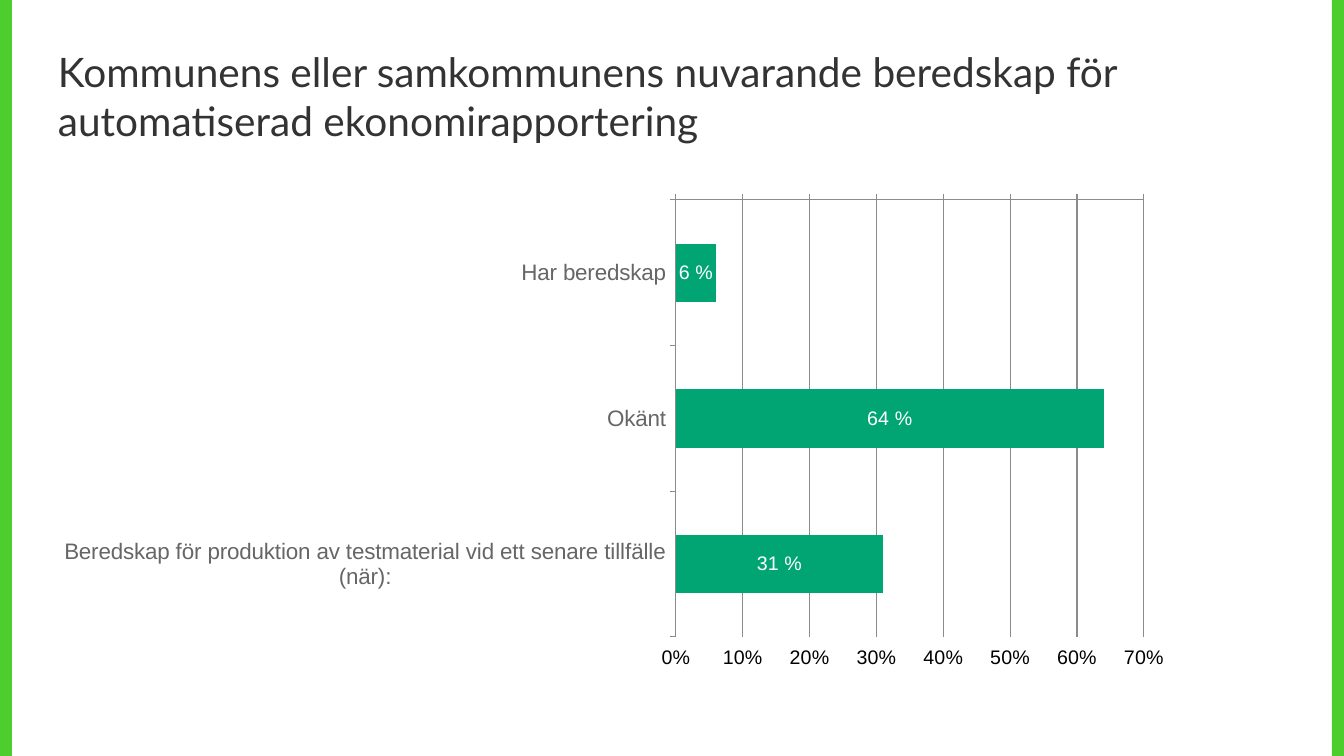
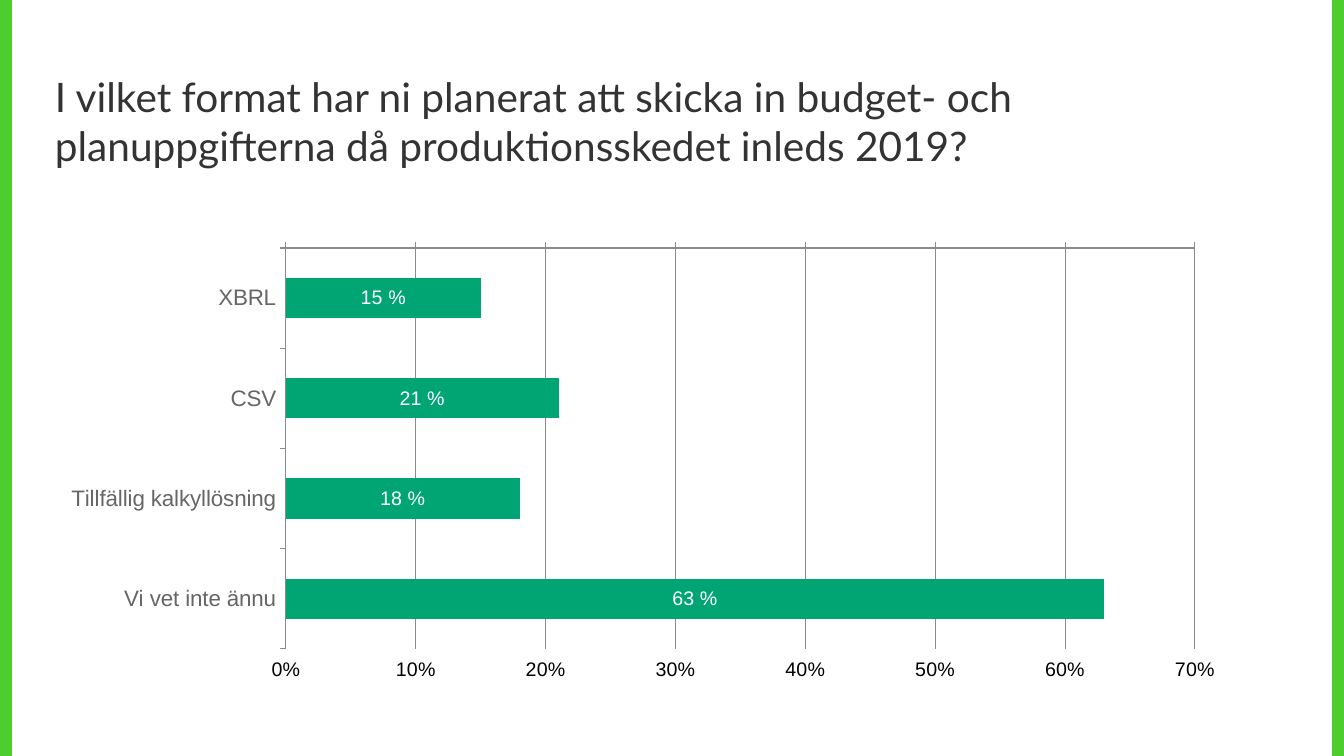
from lxml import etree
from pptx import Presentation
from pptx.chart.data import CategoryChartData
from pptx.dml.color import RGBColor
from pptx.enum.chart import XL_CHART_TYPE, XL_LABEL_POSITION, XL_TICK_LABEL_POSITION, XL_TICK_MARK
from pptx.enum.shapes import MSO_SHAPE
from pptx.enum.text import MSO_ANCHOR, MSO_AUTO_SIZE
from pptx.oxml.ns import qn
from pptx.util import Emu, Pt

BAR_CLUSTERED = XL_CHART_TYPE.BAR_CLUSTERED
CENTER = XL_LABEL_POSITION.CENTER
LOW, HIGH = XL_TICK_LABEL_POSITION.LOW, XL_TICK_LABEL_POSITION.HIGH
OUTSIDE, NONE = XL_TICK_MARK.OUTSIDE, XL_TICK_MARK.NONE
RECTANGLE = MSO_SHAPE.RECTANGLE
MIDDLE = MSO_ANCHOR.MIDDLE
GROW = MSO_AUTO_SIZE.SHAPE_TO_FIT_TEXT

SLIDE_WIDTH, SLIDE_HEIGHT = 1344, 756
BAND_WIDTH = 12
EMU_PER_PX = 12192000 / SLIDE_WIDTH

COLORS = {
    "band": "4DCE2E",
    "title": "333333",
    "bar": "00A573",
    "category": "666666",
    "grid": "8B8B8B",
    "value": "000000",
    "bar_label": "FFFFFF",
}
FONTS = {
    "title": {"name": "Lato", "size": Pt(29)},
    "value": {"name": "Arial", "size": Pt(14)},
    "category": {"name": "Arial", "size": Pt(16)},
    "bar_label": {"name": "Arial", "size": Pt(14)},
}
TITLE_FRAME = {"word_wrap": True, "auto_size": GROW, "vertical_anchor": MIDDLE}
CATEGORY_AXIS = {
    "reverse_order": True,
    "tick_label_position": LOW,
    "major_tick_mark": OUTSIDE,
    "minor_tick_mark": NONE,
    "has_major_gridlines": False,
}
VALUE_AXIS = {
    "minimum_scale": 0,
    "maximum_scale": 0.7,
    "major_unit": 0.1,
    "tick_label_position": HIGH,
    "major_tick_mark": OUTSIDE,
    "minor_tick_mark": NONE,
    "has_major_gridlines": True,
}
BAR_LABELS = {
    "show_value": True,
    "number_format": "0 %",
    "number_format_is_linked": False,
    "position": CENTER,
}

SURVEY = [
    {
        "title": "Kommunens eller samkommunens nuvarande beredskap för automatiserad ekonomirapportering",
        "title_box": (48, 42, 1139, 108),
        "chart_box": (42, 191, 1146, 489),
        "plot_box": (676, 200, 468, 437),
        "answers": {
            "Har beredskap": 0.06,
            "Okänt": 0.64,
            "Beredskap för produktion av testmaterial vid ett senare tillfälle (när):": 0.31,
        },
    },
    {
        "title": "I vilket format har ni planerat att skicka in budget- och planuppgifterna då produktionsskedet inleds 2019?",
        "title_box": (45, 66, 1198, 109),
        "chart_box": (42, 240, 1198, 451),
        "plot_box": (286, 248, 909, 401),
        "answers": {
            "XBRL": 0.15,
            "CSV": 0.21,
            "Tillfällig kalkyllösning": 0.18,
            "Vi vet inte ännu": 0.63,
        },
    },
]


def px(*lengths):
    """Turn pixel lengths into EMU."""
    return [Emu(round(length * EMU_PER_PX)) for length in lengths]


def color(role):
    """Return the colour of a role."""
    return RGBColor.from_string(COLORS[role])


def apply_format(target, values):
    """Set each format value on the target."""
    for attribute, value in values.items():
        setattr(target, attribute, value)


def style_font(font, role):
    """Give a font the face, size and colour of its role."""
    apply_format(font, FONTS[role])
    font.color.rgb = color(role)


def style_line(line):
    """Give an axis or grid line its thin grey stroke."""
    line.color.rgb = color("grid")
    line.width = Pt(0.75)


def add_side_bands(slide):
    """Draw the green bands along both slide edges."""
    for left in (0, SLIDE_WIDTH - BAND_WIDTH):
        band = slide.shapes.add_shape(RECTANGLE, *px(left, 0, BAND_WIDTH, SLIDE_HEIGHT))
        band.shadow.inherit = False
        band.fill.solid()
        band.fill.fore_color.rgb = color("band")
        band.line.fill.background()


def add_title(slide, box, question):
    """Write the survey question in the given box."""
    frame = slide.shapes.add_textbox(*px(*box)).text_frame
    apply_format(frame, TITLE_FRAME)
    paragraph = frame.paragraphs[0]
    run = paragraph.add_run()
    run.text = question
    style_font(run.font, "title")


def place_plot(chart, chart_box, plot_box):
    """Fix the inner plot area as fractions of the chart box."""
    left, top, width, height = chart_box
    plot_left, plot_top, plot_width, plot_height = plot_box
    plot_area = chart.element.find(".//" + qn("c:plotArea"))
    for automatic in plot_area.findall(qn("c:layout")):
        plot_area.remove(automatic)
    layout = etree.Element(qn("c:layout"))
    plot_area.insert(0, layout)
    manual = etree.SubElement(layout, qn("c:manualLayout"))
    settings = {
        "layoutTarget": "inner",
        "xMode": "edge",
        "yMode": "edge",
        "x": (plot_left - left) / width,
        "y": (plot_top - top) / height,
        "w": plot_width / width,
        "h": plot_height / height,
    }
    for tag, value in settings.items():
        etree.SubElement(manual, qn("c:" + tag)).set("val", str(value))


def add_answer_chart(slide, chart_box, plot_box, answers):
    """Draw the answer shares as horizontal bars in the given box."""
    shares = CategoryChartData(number_format="0%")
    shares.categories = list(answers)
    shares.add_series("Series 1", list(answers.values()))
    chart = slide.shapes.add_chart(BAR_CLUSTERED, *px(*chart_box), shares).chart
    apply_format(chart, {"has_legend": False, "has_title": False})
    style_font(chart.font, "value")
    place_plot(chart, chart_box, plot_box)

    axes = (
        (chart.category_axis, CATEGORY_AXIS, "category"),
        (chart.value_axis, VALUE_AXIS, "value"),
    )
    for axis, values, role in axes:
        apply_format(axis, values)
        style_font(axis.tick_labels.font, role)
        style_line(axis.format.line)
    style_line(chart.value_axis.major_gridlines.format.line)
    apply_format(
        chart.value_axis.tick_labels,
        {"number_format": "0%", "number_format_is_linked": False},
    )

    bars = chart.plots[0]
    apply_format(bars, {"gap_width": 150, "vary_by_categories": False, "has_data_labels": True})
    apply_format(bars.data_labels, BAR_LABELS)
    style_font(bars.data_labels.font, "bar_label")
    fill = bars.series[0].format.fill
    fill.solid()
    fill.fore_color.rgb = color("bar")


def add_question_slide(deck, question):
    """Build one slide with a question and its answers."""
    slide = deck.slides.add_slide(deck.slide_layouts[6])
    add_side_bands(slide)
    add_title(slide, question["title_box"], question["title"])
    add_answer_chart(slide, question["chart_box"], question["plot_box"], question["answers"])


def main():
    """Build and save the survey slides."""
    deck = Presentation()
    deck.slide_width, deck.slide_height = px(SLIDE_WIDTH, SLIDE_HEIGHT)
    for question in SURVEY:
        add_question_slide(deck, question)
    deck.save("out.pptx")


if __name__ == "__main__":
    main()
